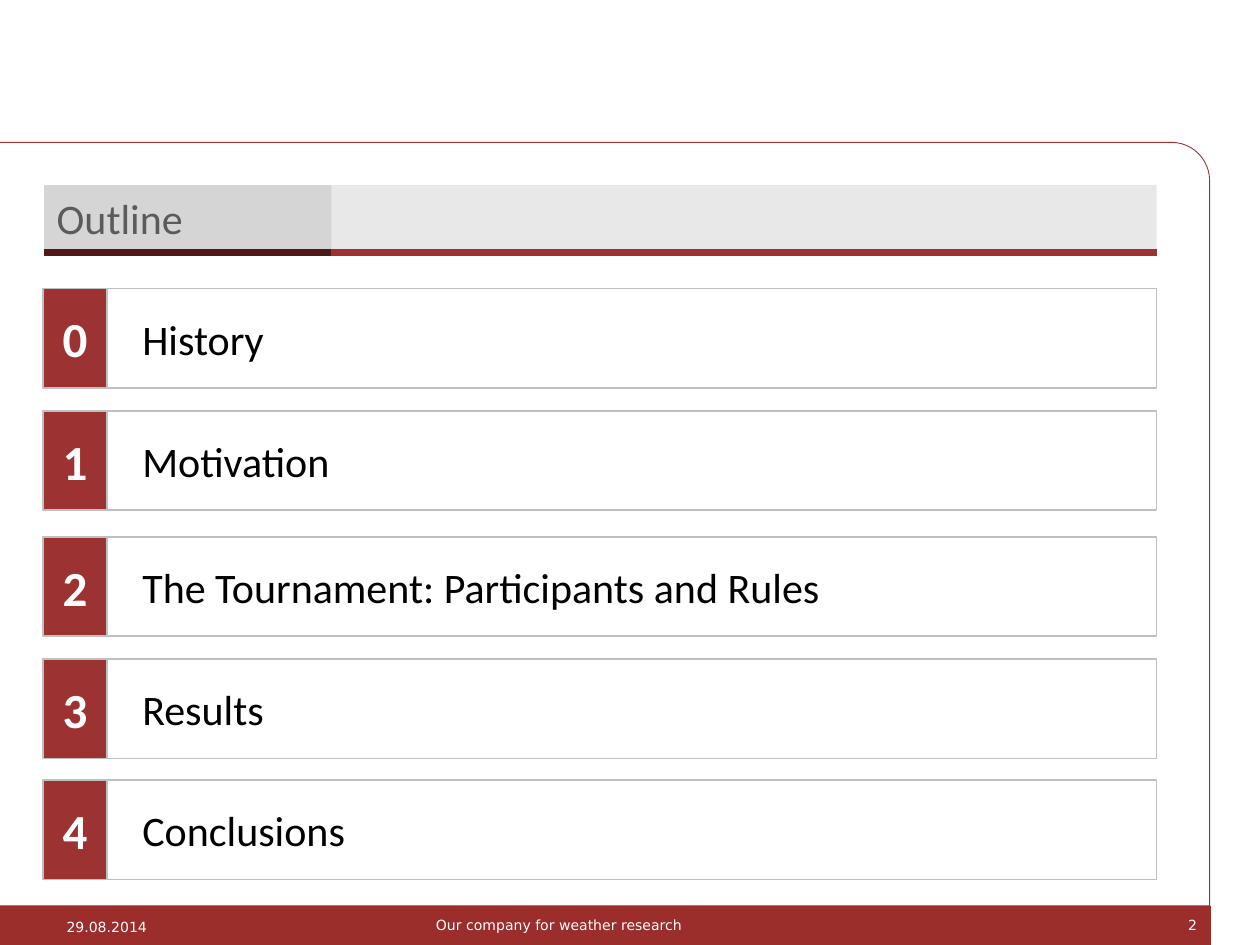
import pptx
import pptx.util
import pptx.dml.color
import pptx.enum.shapes
import pptx.enum.text
import pptx.oxml.ns
from lxml import etree

Inches, Pt = pptx.util.Inches, pptx.util.Pt
SHAPE = pptx.enum.shapes.MSO_SHAPE
ALIGN = pptx.enum.text.PP_ALIGN
ANCHOR = pptx.enum.text.MSO_ANCHOR

# Content
TITLE = "Outline"
ROWS = [  # top, topic
    (2.29, "History"),
    (3.26, "Motivation"),
    (4.26, "The Tournament: Participants and Rules"),
    (5.23, "Results"),
    (6.19, "Conclusions"),
]
FOOTER = [  # text, box, insets, alignment
    ("29.08.2014", (0.43, 7.24, 0.86, 0.24), (0.1, 0.05, 0.1, 0.05), ALIGN.LEFT),
    ("Our company for weather research", (3.46, 7.18, 2.48, 0.32),
     (0, 0.05, 0.1, 0.05), ALIGN.LEFT),
    ("2", (8.83, 7.18, 0.77, 0.32), (0.1, 0.05, 0.1, 0.05), ALIGN.RIGHT),
]
RED, DARK, GREY = "9D3232", "4F1919", "C0C0C0"
LEFT, SPLIT, RIGHT = 0.35, 2.63, 9.18
NUM_LEFT, NUM_WIDE, ROW_HIGH = 0.34, 0.51, 0.79


def rgb(code):
    return pptx.dml.color.RGBColor.from_string(code)


def paint(shape, code, alpha=None):
    shape.fill.solid()
    shape.fill.fore_color.rgb = rgb(code)
    if alpha:
        tag = pptx.oxml.ns.qn("a:srgbClr")
        node = next(shape.fill._xPr.iter(tag))
        etree.SubElement(node, pptx.oxml.ns.qn("a:alpha"), val=str(alpha * 1000))


def place(shape, box):
    shape.left, shape.top, shape.width, shape.height = map(Inches, box)


def add_box(box, fill=None, line=None, wide=1, alpha=None, kind=SHAPE.RECTANGLE):
    shape = slide.shapes.add_shape(kind, *map(Inches, box))
    shape.shadow.inherit = False
    if fill:
        paint(shape, fill, alpha)
    else:
        shape.fill.background()
    if line:
        shape.line.color.rgb = rgb(line)
        shape.line.width = Pt(wide)
    else:
        shape.line.fill.background()
    return shape


def write(shape, text, size, code, face="Calibri", bold=False,
          align=ALIGN.LEFT, pads=(0.1, 0.05, 0.1, 0.05), wrap=True):
    frame = shape.text_frame
    frame.text = text
    frame.word_wrap = wrap
    frame.auto_size = pptx.enum.text.MSO_AUTO_SIZE.NONE
    frame.vertical_anchor = ANCHOR.MIDDLE
    (frame.margin_left, frame.margin_top,
     frame.margin_right, frame.margin_bottom) = map(Inches, pads)
    para = frame.paragraphs[0]
    para.alignment = align
    font = para.font
    font.name, font.size, font.bold = face, Pt(size), bold
    font.color.rgb = rgb(code)


deck = pptx.Presentation()
deck.slide_width, deck.slide_height = Inches(10), Inches(7.5)
slide = deck.slides.add_slide(deck.slide_layouts[5])

# Page frame and footer band
page = add_box((-0.01, 1.13, 9.61, 6.06), line=RED, wide=0.5,
               kind=SHAPE.ROUND_1_RECTANGLE)
page.adjustments[0] = 0.05
add_box((0, 7.19, 9.61, 0.31), "9B2D2A")
for text, box, pads, align in FOOTER:
    label = slide.shapes.add_textbox(*map(Inches, box))
    write(label, text, 8, "FFFFFF", "DejaVu Sans", align=align, pads=pads, wrap=False)

# Title bar with its darker left part and underline
title = slide.shapes.title
place(title, (LEFT, 1.47, RIGHT - LEFT, 0.51))
paint(title, "A6A6A6", 25)
write(title, TITLE, 24, "0D0D0D")
add_box((LEFT, 1.47, SPLIT - LEFT, 0.51), "BFBFBF", alpha=44)
for start, end, code in [(LEFT, SPLIT, DARK), (SPLIT, RIGHT, RED)]:
    add_box((start, 1.98, end - start, 0.05), code, kind=SHAPE.FLOWCHART_PROCESS)

# Numbered topics
edge = NUM_LEFT + NUM_WIDE
for num, (top, topic) in enumerate(ROWS):
    row = add_box((edge, top, RIGHT - edge, ROW_HIGH), line=GREY)
    write(row, topic, 24, "000000", pads=(0.28, 0.08, 0.08, 0.08))
    cell = add_box((NUM_LEFT, top, NUM_WIDE, ROW_HIGH), RED, GREY)
    write(cell, str(num), 28, "FFFFFF", bold=True, align=ALIGN.CENTER, pads=(0, 0, 0, 0))

deck.save("out.pptx")
